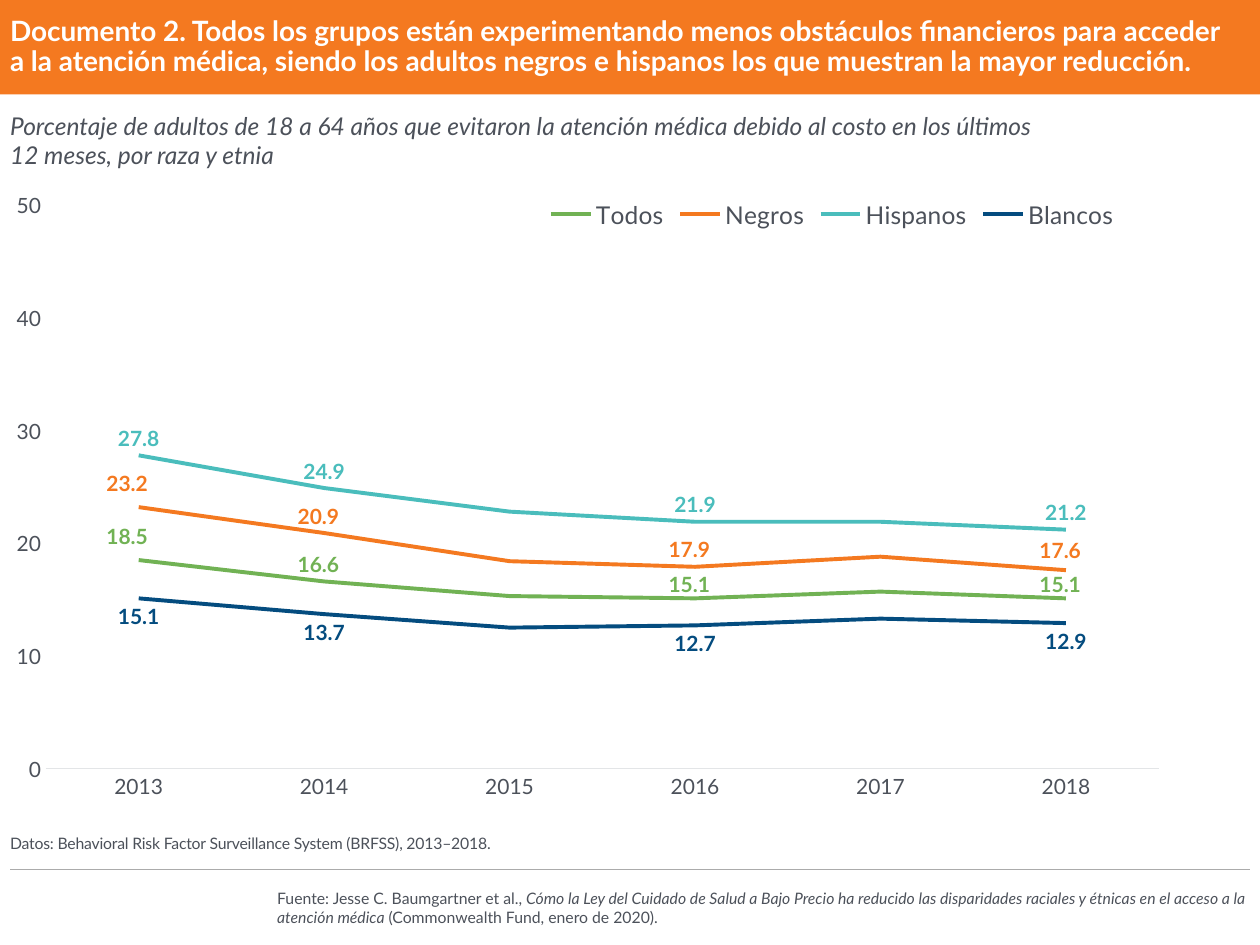
from copy import deepcopy
from dataclasses import dataclass, field

from lxml import etree
from pptx import Presentation
from pptx.chart.data import CategoryChartData
from pptx.dml.color import RGBColor
from pptx.enum.chart import XL_CHART_TYPE, XL_LABEL_POSITION, XL_LEGEND_POSITION, XL_TICK_MARK
from pptx.enum.shapes import MSO_CONNECTOR, MSO_SHAPE
from pptx.enum.text import MSO_ANCHOR
from pptx.oxml import parse_xml
from pptx.oxml.ns import nsdecls, qn
from pptx.util import Inches, Pt

MIDDLE, BOTTOM = MSO_ANCHOR.MIDDLE, MSO_ANCHOR.BOTTOM
ABOVE, BELOW = XL_LABEL_POSITION.ABOVE, XL_LABEL_POSITION.BELOW
NO_TICK = XL_TICK_MARK.NONE
LEGEND_RIGHT = XL_LEGEND_POSITION.RIGHT

FONT = "Lato"
GRAY, ORANGE, WHITE = "4C515A", "F47920", "FFFFFF"
SLIDE_WIDTH, SLIDE_HEIGHT = 10, 7.5
MARGIN = 0.08
CONTENT_WIDTH = SLIDE_WIDTH - 2 * MARGIN
BANNER_HEIGHT = SLIDE_HEIGHT / 10

YEARS = ["2013", "2014", "2015", "2016", "2017", "2018"]
UNLABELLED = (2, 4)


@dataclass
class Group:
    name: str
    values: list[float]
    color: str
    position: object = ABOVE
    # Label shifts by point, as shares of the chart's size
    shifts: dict[int, tuple[float, float]] = field(default_factory=dict)


GROUPS = [
    Group("Todos", [18.5, 16.6, 15.3, 15.1, 15.7, 15.1], "71B254",
          shifts={0: (-0.01, -0.01), 1: (-0.005, 0), 3: (-0.005, 0.005), 5: (-0.005, 0.005)}),
    Group("Negros", [23.2, 20.9, 18.4, 17.9, 18.8, 17.6], ORANGE,
          shifts={0: (-0.01, -0.01), 1: (-0.005, 0), 3: (-0.005, 0), 5: (-0.005, -0.005)}),
    Group("Hispanos", [27.8, 24.9, 22.8, 21.9, 21.9, 21.2], "4ABDBC"),
    Group("Blancos", [15.1, 13.7, 12.5, 12.7, 13.3, 12.9], "044C7F", BELOW),
]


def rgb(color: str) -> RGBColor:
    return RGBColor.from_string(color)


def style_font(font, size: float, color: str, bold: bool = False, italic: bool = False) -> None:
    font.name, font.size = FONT, Pt(size)
    font.bold, font.italic = bold, italic
    font.color.rgb = rgb(color)


def add_text(slide, box: tuple, parts: list[tuple[str, bool]], *, size: float, color: str = GRAY,
             bold: bool = False, anchor=MIDDLE, line_spacing: float = 1.0,
             space_after: float = 0, tracking: int = 0) -> None:
    """Add one paragraph of (text, italic) parts; a newline is a line break."""
    frame = slide.shapes.add_textbox(*map(Inches, box)).text_frame
    frame.word_wrap = True
    frame.vertical_anchor = anchor
    frame.margin_left = frame.margin_right = frame.margin_top = frame.margin_bottom = 0
    paragraph = frame.paragraphs[0]
    paragraph.line_spacing = line_spacing
    paragraph.space_after = Pt(space_after)
    for text, italic in parts:
        for index, line in enumerate(text.split("\n")):
            if index:
                paragraph.add_line_break()
            run = paragraph.add_run()
            run.text = line
            style_font(run.font, size, color, bold, italic)
            if tracking:
                run._r.get_or_add_rPr().set("spc", str(tracking))


def set_layout(parent, position: int, **shares: float) -> None:
    """Give a chart part a manual layout in shares of the chart's size."""
    for old in parent.findall(qn("c:layout")):
        parent.remove(old)
    inner = '<c:layoutTarget val="inner"/>' if parent.tag == qn("c:plotArea") else ""
    modes = "".join(f'<c:{key}Mode val="edge"/>' for key in "xy") if "w" in shares else ""
    sizes = "".join(f'<c:{key} val="{value}"/>' for key, value in shares.items())
    parent.insert(position, parse_xml(
        f'<c:layout {nsdecls("c")}><c:manualLayout>{inner}{modes}{sizes}'
        "</c:manualLayout></c:layout>"))


def label_points(series, group: Group) -> None:
    labels = series.data_labels
    labels.show_value = True
    labels.number_format, labels.number_format_is_linked = "#,##0.0", False
    labels.position = group.position
    style_font(labels.font, 12, group.color, bold=True)
    element = labels._element
    shared = list(element)
    special = sorted({*UNLABELLED, *group.shifts})
    for place, index in enumerate(special):
        label = parse_xml(f'<c:dLbl {nsdecls("c")}><c:idx val="{index}"/></c:dLbl>')
        if index in UNLABELLED:
            etree.SubElement(label, qn("c:delete")).set("val", "1")
        else:
            x, y = group.shifts[index]
            set_layout(label, 1, x=x, y=y)
            for child in shared:
                if child.tag != qn("c:showLeaderLines"):
                    label.append(deepcopy(child))
        element.insert(place, label)


def add_line_chart(slide, box: tuple) -> None:
    data = CategoryChartData(number_format="0.0")
    data.categories = YEARS
    for group in GROUPS:
        data.add_series(group.name, group.values)
    chart = slide.shapes.add_chart(XL_CHART_TYPE.LINE, *map(Inches, box), data).chart
    chart.has_title = False
    style_font(chart.font, 10, GRAY)

    # Axes
    for axis in (chart.category_axis, chart.value_axis):
        axis.major_tick_mark = axis.minor_tick_mark = NO_TICK
        axis.has_major_gridlines = False
        style_font(axis.tick_labels.font, 12, GRAY)
    axis_line = chart.category_axis.format.line
    axis_line.color.rgb, axis_line.width = rgb("E3E5E7"), Pt(0.75)
    values = chart.value_axis
    values.minimum_scale, values.maximum_scale, values.major_unit = 0, 50, 10
    values.format.line.fill.background()
    values.tick_labels.number_format, values.tick_labels.number_format_is_linked = "0", False

    # Legend in one row, above the lines
    chart.has_legend = True
    chart.legend.position, chart.legend.include_in_layout = LEGEND_RIGHT, True
    style_font(chart.legend.font, 14, GRAY)
    set_layout(chart.legend._element, 1, x=0.46, y=0.01, w=0.5, h=0.06)
    plot_area = chart._chartSpace.chart.plotArea
    set_layout(plot_area, 0, x=0.031, y=0.026, w=0.961, h=0.894)

    # Lines and their labels
    chart.plots[0].vary_by_categories = False
    for series, group in zip(chart.plots[0].series, GROUPS):
        series.smooth = False
        series.format.line.color.rgb = rgb(group.color)
        series.format.line.width = Pt(2.25)
        label_points(series, group)


def add_banner(slide) -> None:
    banner = slide.shapes.add_shape(MSO_SHAPE.RECTANGLE, 0, 0, Inches(SLIDE_WIDTH), Inches(BANNER_HEIGHT))
    banner.shadow.inherit = False
    banner.fill.solid()
    banner.fill.fore_color.rgb = rgb(ORANGE)
    banner.line.fill.background()


def add_rule(slide, top: float) -> None:
    rule = slide.shapes.add_connector(MSO_CONNECTOR.STRAIGHT, Inches(MARGIN), Inches(top),
                                      Inches(SLIDE_WIDTH - MARGIN), Inches(top))
    rule.line.color.rgb, rule.line.width = rgb("ABABAB"), Pt(0.75)
    etree.SubElement(rule._element.spPr, qn("a:effectLst"))


def main() -> None:
    presentation = Presentation()
    presentation.slide_width, presentation.slide_height = Inches(SLIDE_WIDTH), Inches(SLIDE_HEIGHT)
    slide = presentation.slides.add_slide(presentation.slide_layouts[6])

    # Title banner
    add_banner(slide)
    add_text(slide, (MARGIN, 0, CONTENT_WIDTH, BANNER_HEIGHT), [(
        "Documento 2. Todos los grupos están experimentando menos obstáculos financieros para acceder \n"
        "a la atención médica, siendo los adultos negros e hispanos los que muestran la mayor reducción.",
        False)], size=16, color=WHITE, bold=True, line_spacing=0.9)

    # Chart and its heading
    add_line_chart(slide, (MARGIN, 1.5, 9.19, 5))
    add_text(slide, (MARGIN, 0.88, 8.55, 0.47), [(
        "Porcentaje de adultos de 18 a 64 años que evitaron la atención médica debido al costo "
        "en los últimos \n12 meses, por raza y etnia", True)], size=14)

    # Data note and source
    add_text(slide, (MARGIN, 6.23, CONTENT_WIDTH, 0.54), [(
        "Datos: Behavioral Risk Factor Surveillance System (BRFSS), 2013–2018.", False)],
        size=9, anchor=BOTTOM, line_spacing=0.9, space_after=6, tracking=-10)
    add_rule(slide, 6.9)
    add_text(slide, (2.2, 7.05, 7.75, 0.3), [
        ("Fuente: Jesse C. Baumgartner et al., ", False),
        ("Cómo la Ley del Cuidado de Salud a Bajo Precio ha reducido las disparidades raciales "
         "y étnicas en el acceso a la atención médica", True),
        (" (Commonwealth Fund, enero de 2020).", False)], size=9)

    presentation.save("out.pptx")


if __name__ == "__main__":
    main()
